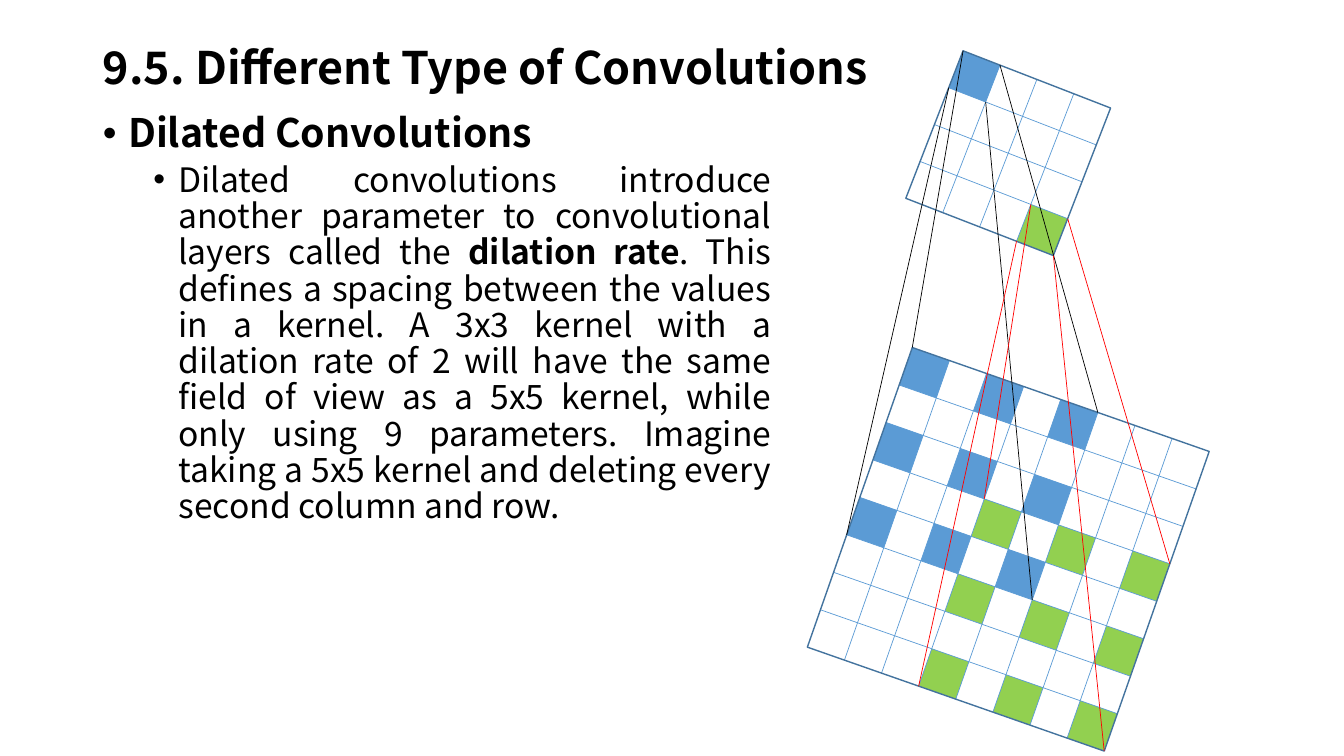
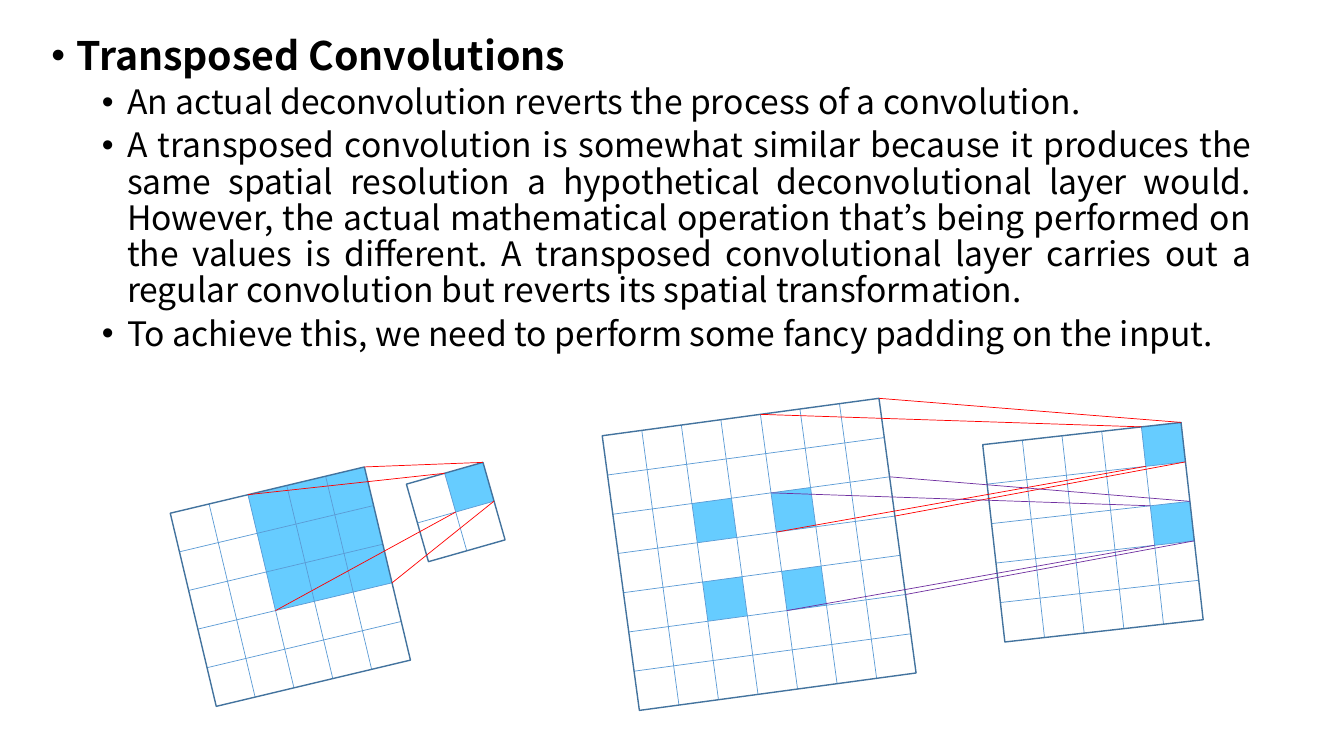
import dataclasses
import itertools
import math
import typing

import lxml.etree
import pptx
import pptx.dml.color
import pptx.enum.dml
import pptx.enum.shapes
import pptx.enum.text
import pptx.oxml.ns
import pptx.util

Inches = pptx.util.Inches
Pt = pptx.util.Pt
Align = pptx.enum.text.PP_ALIGN
qn = pptx.oxml.ns.qn
Spot = tuple[float, float]
Cell = tuple[int, int]


@dataclasses.dataclass(frozen=True)
class Theme:
    font: str = "Noto Sans CJK KR"
    ink: str = "000000"
    paper: str = "FFFFFF"
    edge: str = "43739E"
    blue: str = "5B9BD5"
    green: str = "92D050"
    sky: str = "66CCFF"
    red: str = "FF0000"
    purple: str = "7030A0"
    title: int = 32
    sizes: tuple[int, int] = (28, 24)
    gaps: tuple[int, int] = (10, 5)
    margins: tuple[float, float] = (0.25, 0.75)
    hang: float = -0.25
    thin: float = 0.5
    thick: float = 1


THEME = Theme()


@dataclasses.dataclass(frozen=True)
class Para:
    """A bulleted paragraph; odd-numbered pieces of a plain one are bold."""
    level: int
    pieces: tuple[str, ...]
    align: Align = Align.JUSTIFY


@dataclasses.dataclass(frozen=True)
class Patch:
    """A filled square block of grid cells."""
    cell: Cell
    color: str
    span: int = 1


@dataclasses.dataclass(frozen=True)
class Grid:
    """A turned grid of count by count cells about its centre."""
    centre: Spot
    size: Spot
    count: int
    angle: float
    patches: tuple[Patch, ...]

    def spot(self, col: float, row: float) -> Spot:
        """Slide position of a point given in cell units."""
        x = (col / self.count - 0.5) * self.size[0]
        y = (row / self.count - 0.5) * self.size[1]
        turn = math.radians(self.angle)
        return (self.centre[0] + x * math.cos(turn) - y * math.sin(turn),
                self.centre[1] + x * math.sin(turn) + y * math.cos(turn))


@dataclasses.dataclass(frozen=True)
class Beam:
    """Lines joining the corners of a cell to those of a window."""
    cell: Cell
    window: Cell
    span: int
    color: str


def apply(target: typing.Any, values: dict[str, typing.Any]) -> None:
    for name, value in values.items():
        setattr(target, name, value)


def tint(hue: str) -> pptx.dml.color.RGBColor:
    return pptx.dml.color.RGBColor.from_string(hue)


def write(para: typing.Any, text: str, size: int, bold: bool) -> None:
    run = para.add_run()
    run.text = text
    apply(run.font, {"name": THEME.font, "size": Pt(size), "bold": bold})
    run.font.color.rgb = tint(THEME.ink)


def place(holder: typing.Any, box: tuple[float, ...], anchor: typing.Any) -> None:
    names = ("left", "top", "width", "height")
    apply(holder, dict(zip(names, map(Inches, box))))
    apply(holder.text_frame, {
        "word_wrap": True,
        "auto_size": pptx.enum.text.MSO_AUTO_SIZE.NONE,
        "vertical_anchor": anchor,
    })


def head(slide: typing.Any, text: str) -> None:
    holder = slide.shapes.title
    place(holder, (0.92, 0.4, 11.5, 0.59), pptx.enum.text.MSO_ANCHOR.MIDDLE)
    para = holder.text_frame.paragraphs[0]
    apply(para, {"alignment": Align.LEFT, "line_spacing": 0.9})
    write(para, text, THEME.title, True)


def mark(para: typing.Any, level: int) -> None:
    """Give a paragraph its bullet and hanging indent."""
    props = para._p.get_or_add_pPr()
    props.set("marL", str(Inches(THEME.margins[level])))
    props.set("indent", str(Inches(THEME.hang)))
    lxml.etree.SubElement(props, qn("a:buFont")).set("typeface", "Arial")
    lxml.etree.SubElement(props, qn("a:buChar")).set("char", "•")


def fill_body(slide: typing.Any, box: tuple[float, ...],
              paras: tuple[Para, ...]) -> None:
    holder = slide.placeholders[1]
    place(holder, box, pptx.enum.text.MSO_ANCHOR.TOP)
    frame = holder.text_frame
    for num, item in enumerate(paras):
        para = frame.add_paragraph() if num else frame.paragraphs[0]
        apply(para, {
            "level": item.level,
            "alignment": item.align,
            "line_spacing": 0.9,
            "space_before": Pt(THEME.gaps[item.level]),
            "space_after": Pt(0),
        })
        mark(para, item.level)
        for part, text in enumerate(item.pieces):
            bold = item.level == 0 or part % 2 == 1
            write(para, text, THEME.sizes[item.level], bold)


def draw_line(group: typing.Any, start: Spot, end: Spot, hue: str) -> None:
    line = group.shapes.add_connector(
        pptx.enum.shapes.MSO_CONNECTOR.STRAIGHT,
        *(Inches(value) for value in (*start, *end)))
    line.line.color.rgb = tint(hue)
    line.line.width = Pt(THEME.thin)
    lxml.etree.SubElement(line._element.spPr, qn("a:effectLst"))


def draw_rect(group: typing.Any, centre: Spot, size: Spot,
              angle: float) -> typing.Any:
    corner = (mid - side / 2 for mid, side in zip(centre, size))
    rect = group.shapes.add_shape(
        pptx.enum.shapes.MSO_SHAPE.RECTANGLE,
        *(Inches(value) for value in (*corner, *size)))
    rect.rotation = angle
    rect.shadow.inherit = False
    return rect


def draw_grid(group: typing.Any, grid: Grid) -> None:
    count = grid.count
    for patch in grid.patches:
        col, row = patch.cell
        half = patch.span / 2
        width, height = (side * patch.span / count for side in grid.size)
        rect = draw_rect(group, grid.spot(col + half, row + half),
                         (width, height), grid.angle)
        rect.fill.solid()
        rect.fill.fore_color.rgb = tint(patch.color)
        rect.line.fill.background()
    for step in range(1, count):
        for start, end in (((0, step), (count, step)), ((step, 0), (step, count))):
            draw_line(group, grid.spot(*start), grid.spot(*end), THEME.blue)
    frame = draw_rect(group, grid.centre, grid.size, grid.angle)
    frame.fill.background()
    frame.line.color.rgb = tint(THEME.edge)
    frame.line.width = Pt(THEME.thick)


def draw_pair(slide: typing.Any, small: Grid, big: Grid,
              beams: tuple[Beam, ...]) -> None:
    """Draw two grids and the beams from the small to the big one."""
    group = slide.shapes.add_group_shape()
    draw_grid(group, small)
    draw_grid(group, big)
    for beam in beams:
        for right, down in itertools.product((0, 1), repeat=2):
            start = small.spot(beam.cell[0] + right, beam.cell[1] + down)
            end = big.spot(beam.window[0] + right * beam.span,
                           beam.window[1] + down * beam.span)
            draw_line(group, start, end, beam.color)


def lattice(steps: tuple[int, ...], hue: str) -> tuple[Patch, ...]:
    """Patches at every crossing of the given columns and rows."""
    return tuple(Patch(cell, hue) for cell in itertools.product(steps, repeat=2))


DILATED = (
    Para(0, ("Dilated Convolutions",), Align.LEFT),
    Para(1, (
        "Dilated convolutions introduce another parameter to convolutional "
        "layers called the ",
        "dilation rate",
        ". This defines a spacing between the values in a kernel. A 3x3 kernel "
        "with a dilation rate of 2 will have the same field of view as a 5x5 "
        "kernel, while only using 9 parameters. Imagine taking a 5x5 kernel "
        "and deleting every second column and row.",
    )),
)
TRANSPOSED = (
    Para(0, ("Transposed Convolutions",)),
    Para(1, ("An actual deconvolution reverts the process of a convolution.",)),
    Para(1, (
        "A transposed convolution is somewhat similar because it produces the "
        "same spatial resolution a hypothetical deconvolutional layer would. "
        "However, the actual mathematical operation that’s being performed on "
        "the values is different. A transposed convolutional layer carries out "
        "a regular convolution but reverts its spatial transformation.",
    )),
    Para(1, ("To achieve this, we need to perform some fancy padding on the "
             "input.",)),
)


def add_slide(deck: typing.Any) -> typing.Any:
    slide = deck.slides.add_slide(deck.slide_layouts[1])
    slide.background.fill.solid()
    slide.background.fill.fore_color.rgb = tint(THEME.paper)
    return slide


def show_dilated(deck: typing.Any) -> None:
    slide = add_slide(deck)
    head(slide, "9.5. Different Type of Convolutions")
    fill_body(slide, (0.92, 1.08, 6.83, 6.09), DILATED)
    output = Grid((10, 1.52), (1.57, 1.57), 4, 21.2,
                  (Patch((0, 0), THEME.blue), Patch((3, 3), THEME.green)))
    source = Grid((10, 5.45), (3.12, 3.15), 8, 19.3,
                  lattice((0, 2, 4), THEME.blue) + lattice((3, 5, 7), THEME.green))
    draw_pair(slide, output, source, (
        Beam((0, 0), (0, 0), 5, THEME.ink),
        Beam((3, 3), (3, 3), 5, THEME.red),
    ))


def show_transposed(deck: typing.Any) -> None:
    slide = add_slide(deck)
    title = slide.shapes.title._element
    title.getparent().remove(title)
    fill_body(slide, (0.41, 0.31, 12.1, 6.09), TRANSPOSED)

    output = Grid((4.52, 5.08), (0.79, 0.8), 2, -15.9, (Patch((1, 0), THEME.sky),))
    source = Grid((2.88, 5.82), (1.98, 1.97), 5, -13.4,
                  (Patch((2, 0), THEME.sky, 3),))
    draw_pair(slide, output, source, (Beam((1, 0), (2, 0), 3, THEME.red),))

    output = Grid((10.84, 5.28), (1.98, 1.97), 5, -6.4,
                  (Patch((4, 0), THEME.sky), Patch((4, 2), THEME.sky)))
    padded = Grid((7.53, 5.5), (2.77, 2.75), 7, -7.7, lattice((2, 4), THEME.sky))
    draw_pair(slide, output, padded, (
        Beam((4, 0), (4, 0), 3, THEME.red),
        Beam((4, 2), (4, 2), 3, THEME.purple),
    ))


def main() -> None:
    deck = pptx.Presentation()
    apply(deck, {"slide_width": Inches(13.33), "slide_height": Inches(7.5)})
    show_dilated(deck)
    show_transposed(deck)
    deck.save("out.pptx")


if __name__ == "__main__":
    main()
